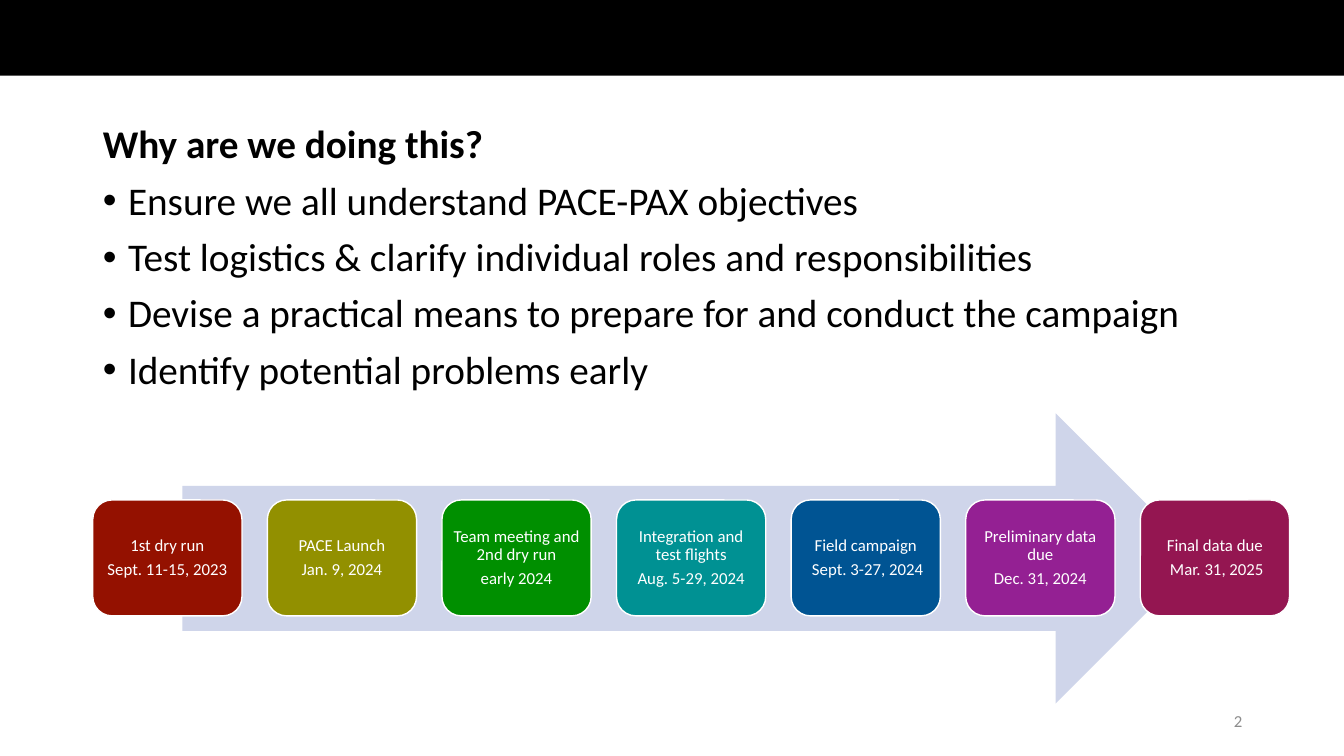
from lxml.etree import SubElement
from pptx import Presentation
from pptx.dml.color import RGBColor
from pptx.enum.shapes import MSO_SHAPE
from pptx.enum.text import MSO_ANCHOR, MSO_AUTO_SIZE, PP_ALIGN
from pptx.oxml.ns import qn
from pptx.util import Inches, Pt

HEADING = "Why are we doing this?"
REASONS = [
    "Ensure we all understand PACE-PAX objectives",
    "Test logistics & clarify individual roles and responsibilities",
    "Devise a practical means to prepare for and conduct the campaign",
    "Identify potential problems early",
]
MILESTONES = [
    ("1st dry run", "Sept. 11-15, 2023", "red"),
    ("PACE Launch", "Jan. 9, 2024", "olive"),
    ("Team meeting and 2nd dry run", "early 2024", "green"),
    ("Integration and test flights", "Aug. 5-29, 2024", "teal"),
    ("Field campaign", " Sept. 3-27, 2024", "blue"),
    ("Preliminary data due", "Dec. 31, 2024", "purple"),
    ("Final data due", " Mar. 31, 2025", "maroon"),
]
PAGE_NUMBER = "2"
COLORS = {
    "black": "000000", "white": "FFFFFF", "gray": "8C8C8C", "arrow": "CFD5EA",
    "red": "941100", "olive": "929000", "green": "008F00", "teal": "009193",
    "blue": "005493", "purple": "942093", "maroon": "941651",
}
FONT = "Calibri"
CARD_LEFT, CARD_TOP, CARD_WIDTH, CARD_HEIGHT = 0.92, 4.96, 1.48, 1.15
LAST_CARD_LEFT = 11.31


def color(name):
    return RGBColor.from_string(COLORS[name])


def add_run(paragraph, text, size, color_name, bold=False):
    run = paragraph.add_run()
    run.text = text
    run.font.name = FONT
    run.font.size = Pt(size)
    run.font.bold = bold
    run.font.color.rgb = color(color_name)


def add_block(slide, kind, left, top, width, height, fill, line=None):
    shape = slide.shapes.add_shape(
        kind, Inches(left), Inches(top), Inches(width), Inches(height))
    shape.shadow.inherit = False
    shape.fill.solid()
    shape.fill.fore_color.rgb = color(fill)
    if line:
        shape.line.color.rgb = color(line)
        shape.line.width = Pt(1)
    else:
        shape.line.fill.background()
    return shape


def set_bullet(paragraph, bulleted):
    properties = paragraph._p.get_or_add_pPr()
    indent = Inches(0.25) if bulleted else 0
    properties.set("marL", str(indent))
    properties.set("indent", str(-indent))
    if bulleted:
        SubElement(properties, qn("a:buFont")).set("typeface", "Arial")
        SubElement(properties, qn("a:buChar")).set("char", "•")
    else:
        SubElement(properties, qn("a:buNone"))


def fill_body(body):
    body.left, body.top = Inches(0.92), Inches(1.19)
    body.width, body.height = Inches(11.5), Inches(5.56)
    frame = body.text_frame
    frame.word_wrap = True
    frame.auto_size = MSO_AUTO_SIZE.NONE
    for index, text in enumerate([HEADING] + REASONS):
        paragraph = frame.add_paragraph() if index else frame.paragraphs[0]
        set_bullet(paragraph, bulleted=index > 0)
        paragraph.line_spacing = 0.9
        paragraph.space_before = Pt(10 if index else 0)
        add_run(paragraph, text, 28, "black", bold=index == 0)


def add_card(slide, left, event, date, fill):
    card = add_block(slide, MSO_SHAPE.ROUNDED_RECTANGLE, left, CARD_TOP,
                     CARD_WIDTH, CARD_HEIGHT, fill, "white")
    frame = card.text_frame
    frame.word_wrap = True
    frame.vertical_anchor = MSO_ANCHOR.MIDDLE
    frame.margin_left = frame.margin_right = Inches(0.05)
    frame.margin_top = frame.margin_bottom = Inches(0.05)
    for paragraph, text in ((frame.paragraphs[0], event),
                            (frame.add_paragraph(), date)):
        paragraph.alignment = PP_ALIGN.CENTER
        paragraph.line_spacing = 0.9
        add_run(paragraph, text, 12, "white")
    frame.paragraphs[0].space_after = Pt(4.2)


def main():
    presentation = Presentation()
    presentation.slide_width = Inches(13.33)
    presentation.slide_height = Inches(7.5)
    slide = presentation.slides.add_slide(presentation.slide_layouts[1])

    # The slide has no title of its own: its heading opens the body text
    title = slide.shapes.title
    title.element.getparent().remove(title.element)
    fill_body(slide.placeholders[1])

    # Top band
    add_block(slide, MSO_SHAPE.RECTANGLE, 0, 0, 13.33, 0.75, "black")

    # Timeline: arrow with evenly spaced milestone cards
    add_block(slide, MSO_SHAPE.RIGHT_ARROW, 1.81, 4.1, 10.1, 2.88, "arrow")
    step = (LAST_CARD_LEFT - CARD_LEFT) / (len(MILESTONES) - 1)
    for index, (event, date, fill) in enumerate(MILESTONES):
        add_card(slide, CARD_LEFT + index * step, event, date, fill)

    # Page number
    number = slide.shapes.add_textbox(
        Inches(9.42), Inches(6.95), Inches(3), Inches(0.4))
    number.text_frame.word_wrap = True
    number.text_frame.vertical_anchor = MSO_ANCHOR.MIDDLE
    paragraph = number.text_frame.paragraphs[0]
    paragraph.alignment = PP_ALIGN.RIGHT
    add_run(paragraph, PAGE_NUMBER, 12, "gray")

    presentation.save("out.pptx")


if __name__ == "__main__":
    main()
